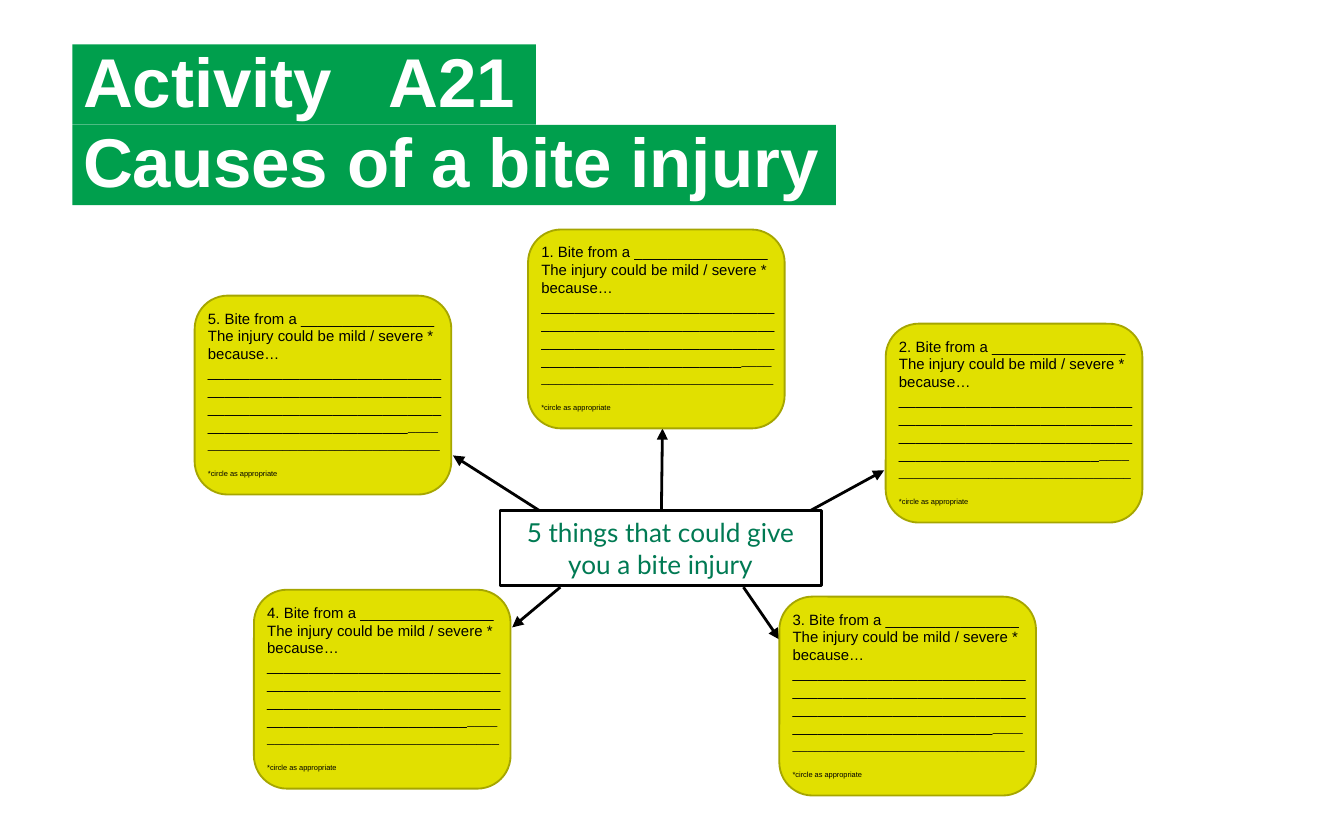
"""Build the activity slide on the causes of a bite injury."""
from pptx import Presentation
from pptx.dml.color import RGBColor
from pptx.enum.shapes import MSO_CONNECTOR as Connector, MSO_SHAPE as Shape
from pptx.enum.text import MSO_ANCHOR as Anchor, PP_ALIGN as Align
from pptx.oxml.ns import qn
from pptx.util import Cm, Pt

GREEN, YELLOW, OLIVE = "009F4D", "E1E000", "A6A600"
CARD_WIDTH, CARD_HEIGHT = 4.85, 3.76
CARD_CORNERS = [(9.98, 4.34), (16.74, 6.12), (14.73, 11.28), (4.8, 11.15), (3.68, 5.59)]
ARROWS = [
    ((12.5, 9.65), (12.52, 8.1)),
    ((15.32, 9.65), (16.71, 8.89)),
    ((14.05, 11.1), (14.73, 12.09)),
    ((10.59, 11.1), (9.68, 11.86)),
    ((10.19, 9.65), (8.56, 8.61)),
]


def color(value):
    """Turn a hex string into a colour."""
    return RGBColor.from_string(value)


def add_span(para, text, size=8, font="Arial", fill="000000", bold=False):
    """Append formatted text to a paragraph."""
    span = para.add_run()
    span.text = text
    span.font.size = Pt(size)
    span.font.name = font
    span.font.bold = bold
    span.font.color.rgb = color(fill)


def add_box(page, kind, place, fill, line=None, width=1):
    """Add a filled preset shape, outlined if a line colour is given."""
    box = page.shapes.add_shape(kind, *map(Cm, place))
    box.shadow.inherit = False
    box.fill.solid()
    box.fill.fore_color.rgb = color(fill)
    if line:
        box.line.color.rgb = color(line)
        box.line.width = Pt(width)
    else:
        box.line.fill.background()
    box.text_frame.word_wrap = True
    box.text_frame.vertical_anchor = Anchor.MIDDLE
    return box


def add_title(page, text, top, width, tab=None):
    """Add one green title bar, with an optional tab stop."""
    frame = add_box(page, Shape.RECTANGLE, (1.37, top, width, 1.52), GREEN).text_frame
    frame.margin_left = frame.margin_right = Cm(0.2)
    frame.margin_top = frame.margin_bottom = Cm(0.1)
    para = frame.paragraphs[0]
    para.alignment = Align.LEFT
    para.line_spacing = 0.9
    if tab:
        stops = para._p.get_or_add_pPr().makeelement(qn("a:tabLst"), {})
        para._p.pPr.append(stops)
        stop = stops.makeelement(qn("a:tab"), {"pos": str(Cm(tab)), "algn": "l"})
        stops.append(stop)
    add_span(para, text, size=37, fill="FFFFFF", bold=True)


def add_topic(page, text):
    """Add the central topic box."""
    box = add_box(page, Shape.RECTANGLE, (9.45, 9.65, 6.07, 1.42), "FFFFFF", "000000", 1.5)
    para = box.text_frame.paragraphs[0]
    para.alignment = Align.CENTER
    add_span(para, text, size=14, font="Lato", fill="007A53")


def add_arrow(page, start, end):
    """Add a black arrow from start to end."""
    arrow = page.shapes.add_connector(Connector.STRAIGHT, *map(Cm, start + end))
    arrow.line.color.rgb = color("000000")
    arrow.line.width = Pt(1.5)
    line = arrow.line._get_or_add_ln()
    line.append(line.makeelement(qn("a:tailEnd"), {"type": "triangle"}))
    properties = arrow._element.spPr
    properties.append(properties.makeelement(qn("a:effectLst"), {}))


def add_card(page, number, left, top):
    """Add a numbered card with blanks to fill in."""
    add_box(page, Shape.ROUNDED_RECTANGLE, (left, top, CARD_WIDTH, CARD_HEIGHT), YELLOW, OLIVE)
    box = page.shapes.add_textbox(Cm(left), Cm(top + 0.13), Cm(4.98), Cm(3.5))
    frame = box.text_frame
    frame.word_wrap = True
    add_span(frame.paragraphs[0], f"{number}. Bite from a " + "_" * 16)
    add_span(frame.add_paragraph(), "The injury could be mild / severe * because…")
    blanks = frame.add_paragraph()
    add_span(blanks, "_" * 108)
    add_span(blanks, "_" * 35, font="Times New Roman")
    footnote = frame.add_paragraph()
    footnote.space_before = Pt(9.2)
    add_span(footnote, "*circle as appropriate", size=4)


def main():
    """Build and save the deck."""
    deck = Presentation()
    deck.slide_width, deck.slide_height = Cm(25.4), Cm(15.88)
    page = deck.slides.add_slide(deck.slide_layouts[6])
    add_title(page, "Activity\tA21", 0.84, 8.76, tab=5.78)
    add_title(page, "Causes of a bite injury", 2.36, 14.43)
    add_topic(page, "5 things that could give you a bite injury")
    for start, end in ARROWS:
        add_arrow(page, start, end)
    for number, (left, top) in enumerate(CARD_CORNERS, 1):
        add_card(page, number, left, top)
    deck.save("out.pptx")


if __name__ == "__main__":
    main()
